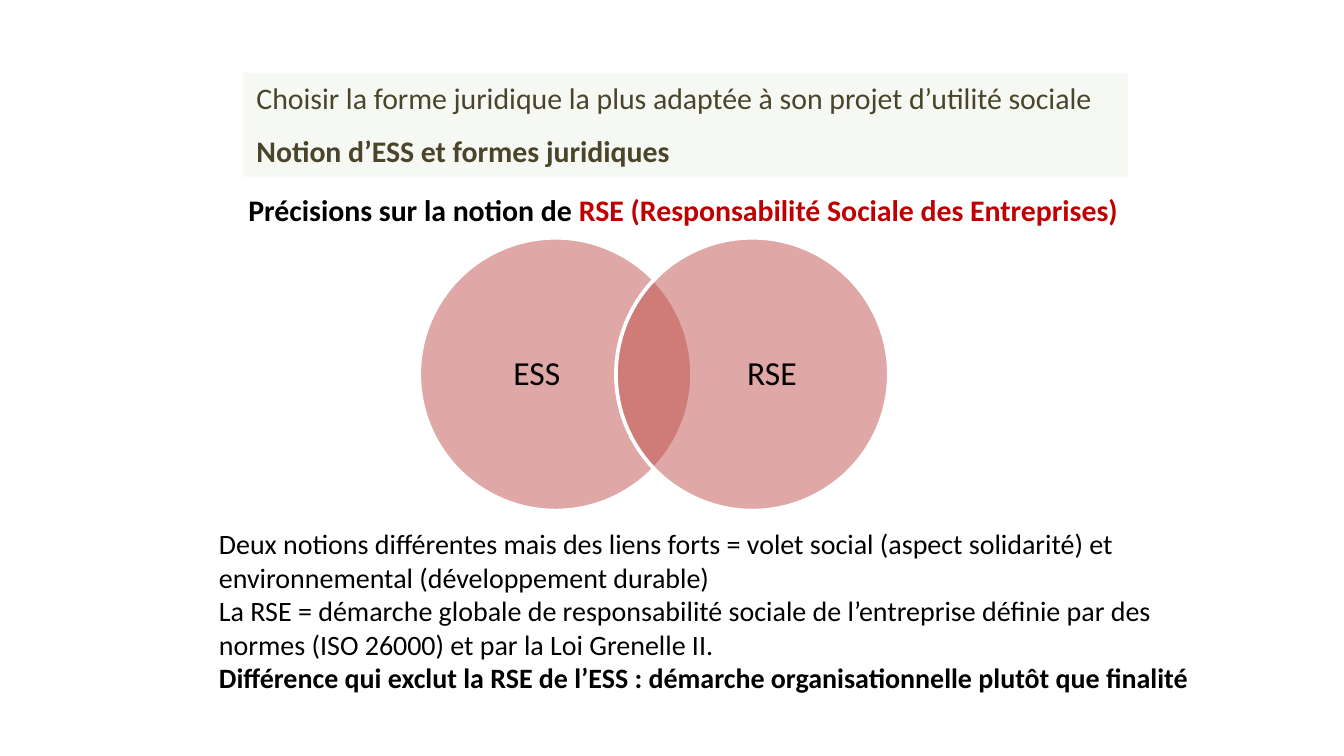
from pptx import Presentation
from pptx.dml.color import RGBColor
from pptx.enum.shapes import MSO_SHAPE
from pptx.enum.text import MSO_ANCHOR, PP_ALIGN
from pptx.oxml.ns import qn
from lxml.etree import SubElement
from pptx.util import Pt

COLORS = {"black": "000000", "red": "C00000", "olive": "4A452A",
          "band": "F6F8F4", "circle": "C0504D", "white": "FFFFFF"}

# Each paragraph is a list of (text, colour, bold) spans.
HEADER = [
    [("Choisir la forme juridique la plus adaptée à son projet d’utilité sociale", "olive", False)],
    [("Notion d’ESS et formes juridiques", "olive", True)],
]
SUBTITLE = [[("Précisions sur la notion de ", "black", True),
             ("RSE (Responsabilité Sociale des Entreprises)", "red", True)]]
EXPLANATION = [
    [("Deux notions différentes mais des liens forts = volet social (aspect solidarité) "
      "et environnemental (développement durable)", "black", False)],
    [("La RSE = démarche globale de responsabilité sociale de l’entreprise définie par des "
      "normes (ISO 26000) et par la Loi Grenelle II.", "black", False)],
    [("Différence qui exclut la RSE de l’ESS : démarche organisationnelle plutôt que finalité",
      "black", True)],
]
NOTIONS = ["ESS", "RSE"]

DIAMETER = 146.2
CIRCLE_LEFT, CIRCLE_TOP, CIRCLE_STEP = 224.6, 127.4, 105.4
LABEL_LEFT, LABEL_STEP = 245.5, 126
LABEL_TOP, LABEL_WIDTH, LABEL_HEIGHT = 144.7, 84.2, 111.6


def color(name):
    return RGBColor.from_string(COLORS[name])


def write(shape, paragraphs, size):
    frame = shape.text_frame
    frame.word_wrap = True
    for index, spans in enumerate(paragraphs):
        para = frame.paragraphs[0] if index == 0 else frame.add_paragraph()
        para.alignment = PP_ALIGN.LEFT
        for text, ink, bold in spans:
            span = para.add_run()
            span.text = text
            span.font.name = "Calibri"
            span.font.size = Pt(size)
            span.font.bold = bold
            span.font.color.rgb = color(ink)
    return frame


def add_shape(page, kind, left, top, width, height, fill):
    shape = page.shapes.add_shape(kind, Pt(left), Pt(top), Pt(width), Pt(height))
    shape.shadow.inherit = False
    shape.fill.solid()
    shape.fill.fore_color.rgb = color(fill)
    return shape


def add_text(page, left, top, width, height, paragraphs, size):
    box = page.shapes.add_textbox(Pt(left), Pt(top), Pt(width), Pt(height))
    return write(box, paragraphs, size)


def add_circle(page, left):
    circle = add_shape(page, MSO_SHAPE.OVAL, left, CIRCLE_TOP, DIAMETER, DIAMETER, "circle")
    circle.line.color.rgb = color("white")
    circle.line.width = Pt(2)
    tint = circle.fill._xPr.find(qn("a:solidFill"))[0]
    SubElement(tint, qn("a:alpha")).set("val", "50000")


def add_label(page, left, text):
    frame = add_text(page, left, LABEL_TOP, LABEL_WIDTH, LABEL_HEIGHT,
                     [[(text, "black", False)]], 18)
    frame.margin_left = frame.margin_right = frame.margin_top = frame.margin_bottom = 0
    frame.vertical_anchor = MSO_ANCHOR.MIDDLE
    para = frame.paragraphs[0]
    para.alignment = PP_ALIGN.CENTER
    para.line_spacing = 0.9


def main():
    deck = Presentation()
    deck.slide_width, deck.slide_height = Pt(720), Pt(405)
    page = deck.slides.add_slide(deck.slide_layouts[6])

    add_text(page, 126, 99.4, 482.4, 26.6, SUBTITLE, 16)
    for index, notion in enumerate(NOTIONS):
        add_circle(page, CIRCLE_LEFT + index * CIRCLE_STEP)
        add_label(page, LABEL_LEFT + index * LABEL_STEP, notion)
    add_text(page, 110.2, 278.6, 553.7, 97.9, EXPLANATION, 15)

    band = add_shape(page, MSO_SHAPE.RECTANGLE, 130.3, 38.9, 473.8, 55.8, "band")
    band.line.fill.background()
    frame = write(band, HEADER, 16)
    frame.vertical_anchor = MSO_ANCHOR.TOP
    frame.paragraphs[1].line_spacing = 1.5

    deck.save("out.pptx")


if __name__ == "__main__":
    main()
